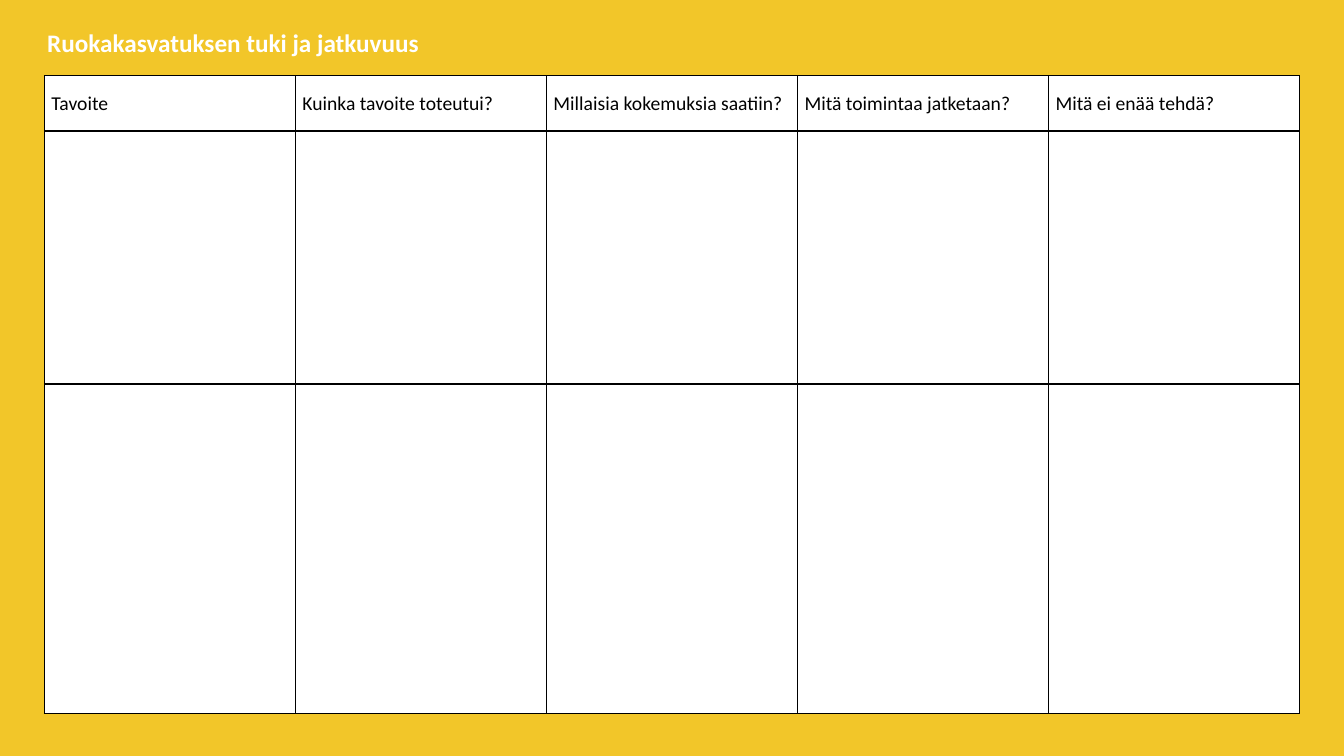
from dataclasses import dataclass

from lxml import etree
from pptx import Presentation
from pptx.dml.color import RGBColor
from pptx.enum.text import MSO_ANCHOR, MSO_AUTO_SIZE
from pptx.oxml.ns import qn
from pptx.util import Inches, Pt

MIDDLE = MSO_ANCHOR.MIDDLE
GROW = MSO_AUTO_SIZE.SHAPE_TO_FIT_TEXT
BLANK_LAYOUT = 6


@dataclass(frozen=True)
class Theme:
    font: str = "Calibri"
    title_size: int = 18
    header_size: int = 14
    background: str = "F2C629"
    paper: str = "FFFFFF"
    ink: str = "000000"
    border_width: int = 1


THEME = Theme()
PAGE_WIDTH, PAGE_HEIGHT = Inches(13.33), Inches(7.5)
TABLE_LEFT, TABLE_TOP = Inches(0.44), Inches(0.75)
COLUMN_WIDTH = Inches(2.49)
ROW_HEIGHTS = [Inches(0.55), Inches(2.51), Inches(3.27)]

TITLE = "Ruokakasvatuksen tuki ja jatkuvuus"
HEADERS = [
    "Tavoite",
    "Kuinka tavoite toteutui?",
    "Millaisia kokemuksia saatiin?",
    "Mitä toimintaa jatketaan?",
    "Mitä ei enää tehdä?",
]


def paint(fill, color):
    fill.solid()
    fill.fore_color.rgb = RGBColor.from_string(color)


def style_font(font, size, color, bold=False):
    font.name = THEME.font
    font.size = Pt(size)
    font.bold = bold
    font.color.rgb = RGBColor.from_string(color)


def add_borders(cell):
    """Draw all four cell sides; must come before the cell's fill."""
    properties = cell._tc.get_or_add_tcPr()
    for side in ("lnL", "lnR", "lnT", "lnB"):
        line = etree.SubElement(properties, qn(f"a:{side}"), w=str(Pt(THEME.border_width)))
        solid = etree.SubElement(line, qn("a:solidFill"))
        etree.SubElement(solid, qn("a:srgbClr"), val=THEME.ink)


def add_title(page, text):
    box = page.shapes.add_textbox(Inches(0.37), Inches(0.22), Inches(5.21), Inches(0.4))
    frame = box.text_frame
    frame.word_wrap = True
    frame.auto_size = GROW
    para = frame.paragraphs[0]
    para.text = text
    style_font(para.font, THEME.title_size, THEME.paper, bold=True)


def fill_header(cell, text):
    cell.vertical_anchor = MIDDLE
    cell.margin_left = cell.margin_right = Inches(0.07)
    cell.margin_top = cell.margin_bottom = 0
    para = cell.text_frame.paragraphs[0]
    para.text = text
    para.line_spacing = 1.07
    para.space_after = Pt(8)
    style_font(para.font, THEME.header_size, THEME.ink)


def add_planning_table(page, headers, row_heights):
    table = page.shapes.add_table(
        len(row_heights), len(headers), TABLE_LEFT, TABLE_TOP,
        COLUMN_WIDTH * len(headers), sum(row_heights),
    ).table
    for column in table.columns:
        column.width = COLUMN_WIDTH
    for row, height in zip(table.rows, row_heights):
        row.height = height
    for cell in table.iter_cells():
        add_borders(cell)
        paint(cell.fill, THEME.paper)
    for cell, text in zip(table.rows[0].cells, headers):
        fill_header(cell, text)


def main():
    deck = Presentation()
    deck.slide_width, deck.slide_height = PAGE_WIDTH, PAGE_HEIGHT
    page = deck.slides.add_slide(deck.slide_layouts[BLANK_LAYOUT])
    paint(page.background.fill, THEME.background)
    add_planning_table(page, HEADERS, ROW_HEIGHTS)
    add_title(page, TITLE)
    deck.save("out.pptx")


if __name__ == "__main__":
    main()
